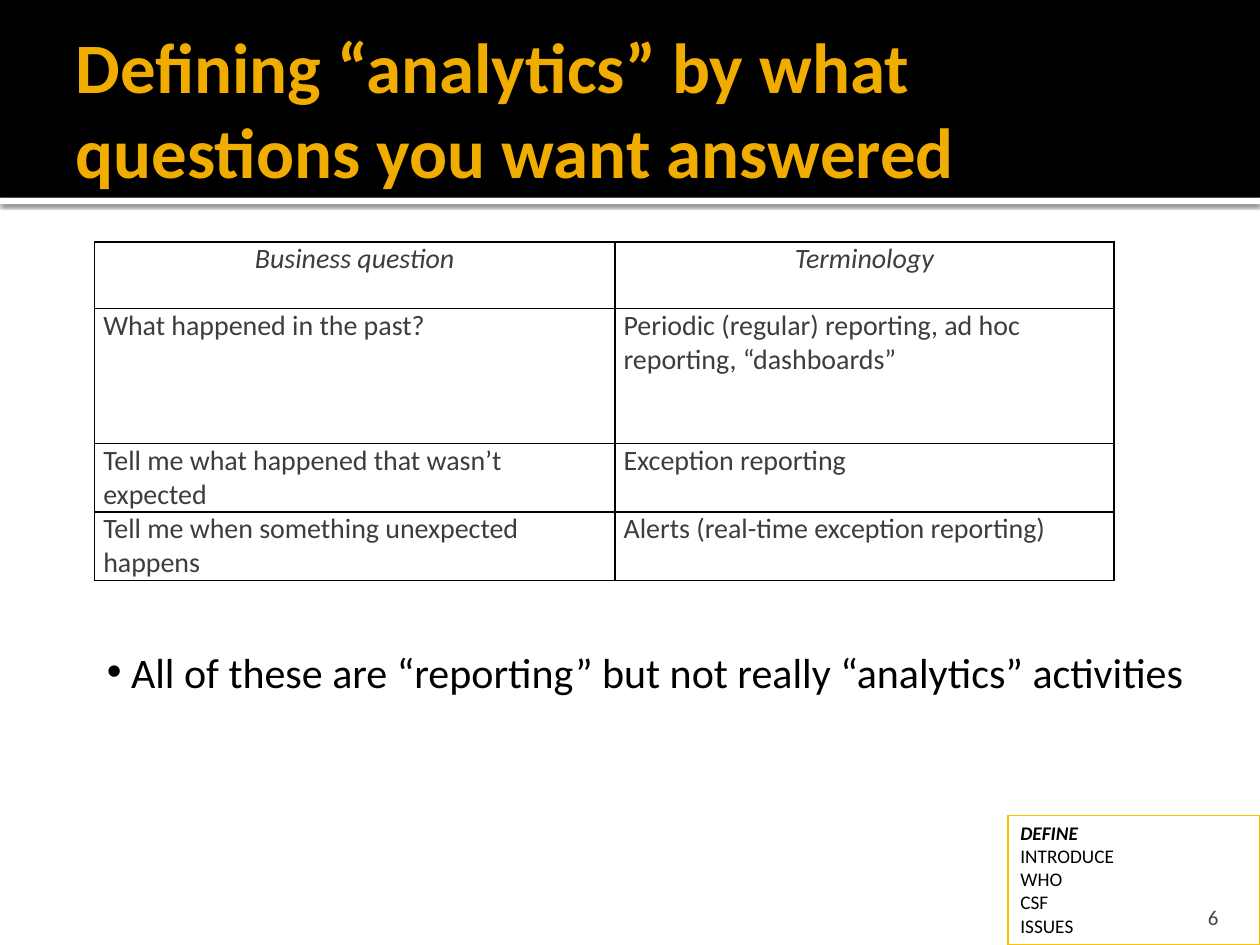
from lxml.etree import SubElement
from pptx import Presentation
from pptx.dml.color import RGBColor
from pptx.enum.shapes import MSO_SHAPE as Shape
from pptx.enum.text import MSO_ANCHOR as Anchor, MSO_AUTO_SIZE as AutoSize, PP_ALIGN as Align
from pptx.oxml import parse_xml
from pptx.oxml.ns import nsdecls, qn
from pptx.util import Inches, Pt


def color(hex_code):
    return RGBColor.from_string(hex_code)


class SlideBuilder:
    font = "Calibri"
    default_insets = (0.1, 0.05, 0.1, 0.05)

    def __init__(self, slide):
        self.slide = slide

    def add_lines(self, frame, lines, hex_code, size, align=Align.LEFT, space_after=0, **styles):
        """Fill a text frame with one paragraph per line."""
        for index, line in enumerate(lines):
            paragraph = frame.add_paragraph() if index else frame.paragraphs[0]
            paragraph.alignment = align
            paragraph.space_after = Pt(space_after)
            run = paragraph.add_run()
            run.text = line
            font_values = {"name": self.font, "size": Pt(size), **styles}
            for key, value in font_values.items():
                setattr(run.font, key, value)
            run.font.color.rgb = color(hex_code)

    def set_frame(self, frame, anchor=Anchor.TOP, insets=default_insets, wrap=True,
                  auto_size=AutoSize.NONE):
        left, top, right, bottom = map(Inches, insets)
        frame_values = {"word_wrap": wrap, "auto_size": auto_size, "vertical_anchor": anchor,
                        "margin_left": left, "margin_top": top,
                        "margin_right": right, "margin_bottom": bottom}
        for key, value in frame_values.items():
            setattr(frame, key, value)

    def text(self, box, lines, hex_code, size, frame_format=None, **styles):
        frame = self.slide.shapes.add_textbox(*map(Inches, box)).text_frame
        self.set_frame(frame, **(frame_format or {}))
        self.add_lines(frame, lines, hex_code, size, **styles)
        return frame

    def rectangle(self, box, fill=None, line=None):
        shape = self.slide.shapes.add_shape(Shape.RECTANGLE, *map(Inches, box))
        shape.shadow.inherit = False
        if fill:
            shape.fill.solid()
            shape.fill.fore_color.rgb = color(fill)
        else:
            shape.fill.background()
        if line:
            shape.line.color.rgb = color(line)
            shape.line.width = Pt(0.75)
        else:
            shape.line.fill.background()
        return shape

    def drop_shadow(self, shape, blur, distance, opacity):
        effects = shape.element.spPr.find(qn("a:effectLst"))
        effects.append(parse_xml(
            f'<a:outerShdw {nsdecls("a")} blurRad="{Pt(blur)}" dist="{Pt(distance)}" '
            f'dir="5400000" algn="t" rotWithShape="0"><a:srgbClr val="000000">'
            f'<a:alpha val="{opacity * 1000}"/></a:srgbClr></a:outerShdw>'))

    def cell_borders(self, cell, hex_code, width):
        properties = cell._tc.get_or_add_tcPr()
        for position, side in enumerate(("lnL", "lnR", "lnT", "lnB")):
            properties.insert(position, parse_xml(
                f'<a:{side} {nsdecls("a")} w="{Pt(width)}"><a:solidFill>'
                f'<a:srgbClr val="{hex_code}"/></a:solidFill></a:{side}>'))

    def table(self, box, widths, heights, rows):
        grid = self.slide.shapes.add_table(len(rows), len(widths), *map(Inches, box)).table
        for column, width in zip(grid.columns, widths):
            column.width = Inches(width)
        for row, height in zip(grid.rows, heights):
            row.height = Inches(height)
        for row_index, row in enumerate(rows):
            header = row_index == 0
            for column_index, wording in enumerate(row):
                cell = grid.cell(row_index, column_index)
                cell.fill.background()
                cell.margin_left = cell.margin_right = Inches(0.07)
                cell.margin_top = cell.margin_bottom = 0
                self.cell_borders(cell, "000000", 1)
                self.add_lines(cell.text_frame, [wording], "3C3D3E", 16, space_after=9,
                               align=Align.CENTER if header else Align.LEFT,
                               italic=header, bold=False)


def main():
    deck = Presentation()
    deck.slide_width, deck.slide_height = Inches(10), Inches(7.5)
    builder = SlideBuilder(deck.slides.add_slide(deck.slide_layouts[6]))

    # Title band
    divider = builder.rectangle((0, 1.57, 10, 0.05), fill="FFFFFF")
    builder.drop_shadow(divider, blur=2.5, distance=0.8, opacity=60)
    builder.rectangle((0, 0, 10, 1.57), fill="000000")
    builder.text((0.5, 0.17, 9, 1.37),
                 ["Defining “analytics” by what questions you want answered"], "F0AD00", 40.5,
                 {"anchor": Anchor.MIDDLE, "insets": (0.1, 0.05, 0.05, 0.05)}, bold=True)

    # Slide number
    builder.text((8.97, 7.08, 0.8, 0.3), ["6"], "454545", 12,
                 {"anchor": Anchor.BOTTOM, "insets": (0.1, 0.05, 0.1, 0)}, align=Align.RIGHT)

    # Questions and their terms
    builder.table((0.75, 1.92, 8.08, 2.67), (4.13, 3.96), (0.53, 1.07, 0.53, 0.53), [
        ("Business question", "Terminology"),
        ("What happened in the past?",
         "Periodic (regular) reporting, ad hoc reporting, “dashboards”"),
        ("Tell me what happened that wasn’t expected", "Exception reporting"),
        ("Tell me when something unexpected happens", "Alerts (real-time exception reporting)"),
    ])

    # Agenda tracker
    agenda = builder.rectangle((8, 6.47, 2, 1.03), line="FFC000").text_frame
    builder.set_frame(agenda, auto_size=AutoSize.SHAPE_TO_FIT_TEXT)
    builder.add_lines(agenda, ["DEFINE", "INTRODUCE", "WHO", "CSF", "ISSUES"], "000000", 11)
    current_topic = agenda.paragraphs[0].runs[0].font
    current_topic.bold = current_topic.italic = True

    # Conclusion
    conclusion = builder.text(
        (0.75, 5.08, 8.85, 0.5),
        [" All of these are “reporting” but not really “analytics” activities"], "000000", 24,
        {"wrap": False, "auto_size": AutoSize.SHAPE_TO_FIT_TEXT})
    bullet_format = conclusion.paragraphs[0]._p.get_or_add_pPr()
    SubElement(bullet_format, qn("a:buFont"), typeface="Arial")
    SubElement(bullet_format, qn("a:buChar"), char="•")

    deck.save("out.pptx")


if __name__ == "__main__":
    main()
